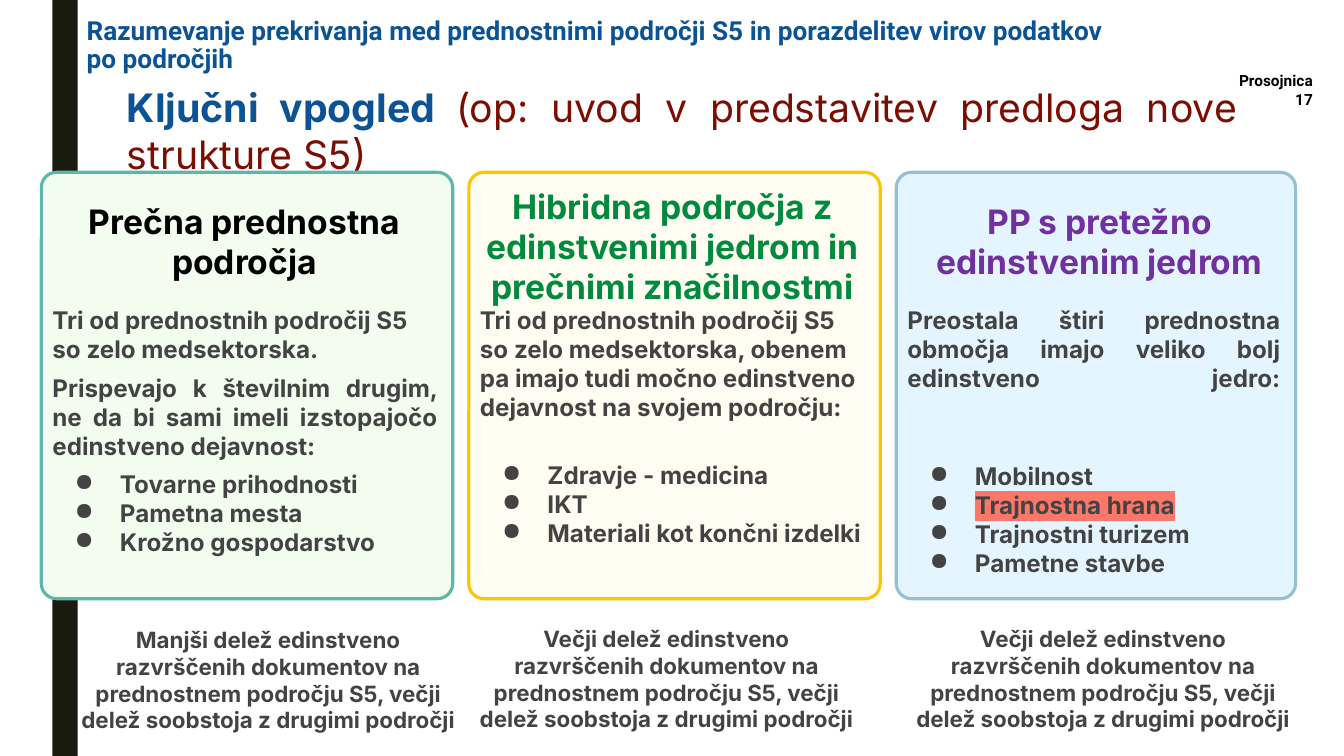
from lxml.etree import SubElement
from pptx import Presentation
from pptx.dml.color import RGBColor
from pptx.enum.shapes import MSO_SHAPE as Shape
from pptx.enum.text import MSO_ANCHOR as Anchor, PP_ALIGN as Align
from pptx.oxml.ns import qn
from pptx.util import Inches, Pt

COLORS = {
    "bar": "191B0E", "blue": "0B5394", "maroon": "7D0D01", "body": "434343",
    "black": "000000", "green": "008A3E", "purple": "7030A0", "highlight": "FD7769",
    "mint": "F2FDEF", "teal": "5DB7AB", "cream": "FFFCF1", "gold": "FCC700",
    "sky": "E5F5FF", "steel": "95BED7",
}
TITLE = "Razumevanje prekrivanja med prednostnimi področji S5 in porazdelitev virov podatkov po področjih"
INSIGHT = [("Ključni vpogled ", "blue", True),
           ("(op: uvod v predstavitev predloga nove strukture S5)", "maroon", False)]
SLIDE_LABEL = "Prosojnica 17"
SHARE = (" delež edinstveno razvrščenih dokumentov na prednostnem področju S5, "
         "večji delež soobstoja z drugimi področji")
HIGHLIGHTED = "Trajnostna hrana"
CARDS = [
    {"left": 0.41, "width": 4.08, "fill": "mint", "line": "teal",
     "heading": "Prečna prednostna področja", "heading_color": "black",
     "heading_box": (0.61, 1.86, 3.63, 0.85),
     "intro": [("Tri od prednostnih področij S5 so zelo medsektorska.", Align.LEFT, 6.7),
               ("Prispevajo k številnim drugim, ne da bi sami imeli izstopajočo edinstveno dejavnost:",
                Align.JUSTIFY, 6.7)],
     "bullets": ["Tovarne prihodnosti", "Pametna mesta", "Krožno gospodarstvo"],
     "bullet_gap": 6.7, "note": "Manjši" + SHARE, "note_at": (0.67, 6.08)},
    {"left": 4.65, "width": 4.08, "fill": "cream", "line": "gold",
     "heading": "Hibridna področja z edinstvenimi jedrom in prečnimi značilnostmi",
     "heading_color": "green", "heading_box": (4.61, 1.71, 4.12, 1.01),
     "intro": [("Tri od prednostnih področij S5 so zelo medsektorska, obenem pa imajo tudi "
                "močno edinstveno dejavnost na svojem področju:", Align.LEFT, 0)],
     "bullets": ["Zdravje - medicina", "IKT", "Materiali kot končni izdelki"],
     "bullet_gap": 27.7, "note": "Večji" + SHARE, "note_at": (4.62, 6.07)},
    {"left": 8.89, "width": 3.96, "fill": "sky", "line": "steel",
     "heading": "PP s pretežno edinstvenim jedrom", "heading_color": "purple",
     "heading_box": (9.09, 1.86, 3.63, 0.56),
     "intro": [("Preostala štiri prednostna območja imajo veliko bolj edinstveno jedro:\v",
                Align.JUSTIFY, 0)],
     "bullets": ["Mobilnost", HIGHLIGHTED, "Trajnostni turizem", "Pametne stavbe"],
     "bullet_gap": 27.7, "note": "Večji" + SHARE, "note_at": (8.95, 6.07)},
]
CARD_TOP, CARD_HEIGHT, CARD_RADIUS = 1.71, 4.23, 0.15
BODY_TOP, BODY_HEIGHT, BODY_SHIFT = 2.9, 3.03, 0.02
BODY_SIZE = 17.3


def rgb(name):
    return RGBColor.from_string(COLORS[name])


def add_panel(page, kind, area, fill, line=None):
    panel = page.shapes.add_shape(kind, *map(Inches, area))
    panel.shadow.inherit = False
    panel.fill.solid()
    panel.fill.fore_color.rgb = rgb(fill)
    if line:
        panel.line.color.rgb = rgb(line)
        panel.line.width = Pt(2.25)
    else:
        panel.line.fill.background()
    return panel


def add_frame(page, area, inset=(0.13, 0.13), anchor=Anchor.TOP):
    frame = page.shapes.add_textbox(*map(Inches, area)).text_frame
    frame.word_wrap = True
    frame.vertical_anchor = anchor
    frame.margin_left = frame.margin_right = Inches(inset[0])
    frame.margin_top = frame.margin_bottom = Inches(inset[1])
    return frame


def style(span, size, color, bold=True, name="Inter"):
    span.font.size = Pt(size)
    span.font.name = name
    span.font.bold = bold
    span.font.color.rgb = rgb(color)


def add_label(page, area, text, size, color, align, name="Inter", **options):
    frame = add_frame(page, area, **options)
    frame.text = text
    para = frame.paragraphs[0]
    para.alignment = align
    style(para.runs[0], size, color, name=name)
    return para


def add_bullet(para):
    props = para._p.get_or_add_pPr()
    props.set("marL", str(Inches(0.67)))
    props.set("indent", str(Inches(-0.45)))
    tint = SubElement(props, qn("a:buClr"))
    SubElement(tint, qn("a:srgbClr"), val=COLORS["body"])
    SubElement(props, qn("a:buChar"), char="●")


def highlight(span):
    props = span._r.get_or_add_rPr()
    mark = SubElement(props, qn("a:highlight"))
    SubElement(mark, qn("a:srgbClr"), val=COLORS["highlight"])
    props.find(qn("a:latin")).addprevious(mark)


def add_body(page, card):
    area = (card["left"] - BODY_SHIFT, BODY_TOP, card["width"], BODY_HEIGHT)
    frame = add_frame(page, area)
    entries = [(*entry, False) for entry in card["intro"]]
    entries += [(text, Align.LEFT, 0 if index else card["bullet_gap"], True)
                for index, text in enumerate(card["bullets"])]
    for index, (text, align, gap, bulleted) in enumerate(entries):
        para = frame.add_paragraph() if index else frame.paragraphs[0]
        para.text = text
        if bulleted:
            add_bullet(para)
        para.alignment = align
        if index:
            para.space_before = Pt(gap)
        for span in para.runs:
            style(span, BODY_SIZE, "body")
            if text == HIGHLIGHTED:
                highlight(span)


def add_card(page, card):
    area = (card["left"], CARD_TOP, card["width"], CARD_HEIGHT)
    panel = add_panel(page, Shape.ROUNDED_RECTANGLE, area, card["fill"], card["line"])
    panel.adjustments[0] = CARD_RADIUS / card["width"]
    add_body(page, card)
    add_label(page, card["heading_box"], card["heading"], 24, card["heading_color"], Align.CENTER)
    add_label(page, (*card["note_at"], 3.98, 1.42), card["note"], 16, "body", Align.CENTER)


def add_insight(page):
    para = add_frame(page, (1.13, 0.7, 11.27, 0.83)).paragraphs[0]
    para.alignment = Align.JUSTIFY
    for text, color, bold in INSIGHT:
        span = para.add_run()
        span.text = text
        style(span, 28, color, bold)


def main():
    deck = Presentation()
    deck.slide_width, deck.slide_height = Inches(13.33), Inches(7.5)
    page = deck.slides.add_slide(deck.slide_layouts[6])
    add_panel(page, Shape.RECTANGLE, (0.52, 0, 0.25, 7.5), "bar")
    add_insight(page)
    for card in CARDS:
        add_card(page, card)
    title = add_label(page, (0.86, 0.18, 10.4, 0.56), TITLE, 18.7, "blue", Align.LEFT,
                      name="Roboto", inset=(0, 0), anchor=Anchor.MIDDLE)
    title.line_spacing = 0.89
    add_label(page, (12.02, 0.66, 1.1, 0.45), SLIDE_LABEL, 11, "black", Align.RIGHT,
              name="Roboto", inset=(0.1, 0.05))
    deck.save("out.pptx")


if __name__ == "__main__":
    main()
